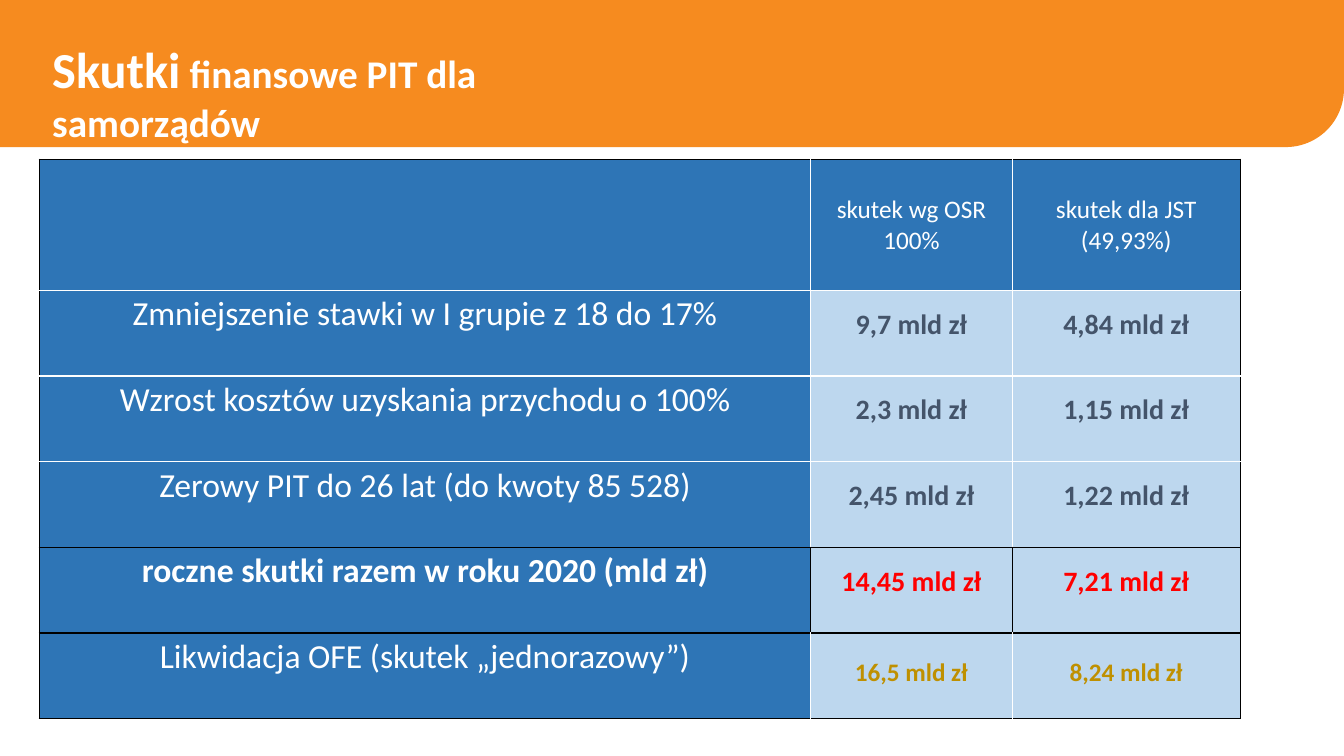
from lxml import etree
from pptx import Presentation
from pptx.dml.color import RGBColor
from pptx.enum.shapes import MSO_SHAPE
from pptx.enum.text import MSO_ANCHOR, PP_ALIGN
from pptx.oxml.ns import qn
from pptx.util import Inches, Pt

ROUNDED_CORNER = MSO_SHAPE.ROUND_1_RECTANGLE
MIDDLE, BOTTOM = MSO_ANCHOR.MIDDLE, MSO_ANCHOR.BOTTOM
CENTER = PP_ALIGN.CENTER

ORANGE = RGBColor(0xF6, 0x8B, 0x1F)
BLUE = RGBColor(0x2E, 0x75, 0xB6)
PALE_BLUE = RGBColor(0xBD, 0xD7, 0xEE)
SLATE = RGBColor(0x44, 0x54, 0x6A)
RED = RGBColor(0xFF, 0x00, 0x00)
GOLD = RGBColor(0xBF, 0x90, 0x00)
WHITE = RGBColor(0xFF, 0xFF, 0xFF)
BLACK = RGBColor(0x00, 0x00, 0x00)

FONT = "Calibri"
LINE_HEIGHT = 1.22
SLIDE_WIDTH, SLIDE_HEIGHT = 13.33, 7.5
COLUMN_WIDTHS = [7.65, 2, 2.26]
HEADER_HEIGHT, ROW_HEIGHT = 1.3, 0.85

HEADERS = ["", "skutek wg OSR 100%", "skutek dla JST (49,93%)"]
# Texts of the row, value size, value colour
EFFECTS = [
    (["Zmniejszenie stawki w I grupie z 18 do 17%", "9,7 mld zł", "4,84 mld zł"], 20, SLATE),
    (["Wzrost kosztów uzyskania przychodu o 100%", "2,3 mld zł", "1,15 mld zł"], 20, SLATE),
    (["Zerowy PIT do 26 lat (do kwoty 85 528)", "2,45 mld zł", "1,22 mld zł"], 20, SLATE),
    (["roczne skutki razem w roku 2020 (mld zł)", "14,45 mld zł", "7,21 mld zł"], 20, RED),
    (["Likwidacja OFE (skutek „jednorazowy”)", "16,5 mld zł", "8,24 mld zł"], 18, GOLD),
]
TOTAL_ROW = 4


def style_font(font, size, color, bold):
    font.name = FONT
    font.size = Pt(size)
    font.color.rgb = color
    font.bold = bold


def add_title_band(slide, left, top, width, height):
    band = slide.shapes.add_shape(
        ROUNDED_CORNER, Inches(left), Inches(top), Inches(width), Inches(height))
    band.adjustments[0] = 0.395
    band.shadow.inherit = False
    band.fill.solid()
    band.fill.fore_color.rgb = ORANGE
    band.line.fill.background()
    band._element.spPr.find(qn("a:xfrm")).set("flipV", "1")

    title = slide.shapes.add_textbox(
        Inches(left + 0.42), Inches(top + 0.33), Inches(6.26), Inches(height - 0.33))
    title.text_frame.word_wrap = True
    paragraph = title.text_frame.paragraphs[0]
    for text, size in [("Skutki", 36), (" finansowe PIT dla samorządów", 28)]:
        run = paragraph.add_run()
        run.text = text
        style_font(run.font, size, WHITE, True)


def set_borders(cell, colors):
    """Draw the left, right, top and bottom borders in the given colours."""
    properties = cell._tc.get_or_add_tcPr()
    for position, (side, color) in enumerate(zip("LRTB", colors)):
        line = etree.Element(qn(f"a:ln{side}"), w=str(Pt(1)))
        fill = etree.SubElement(line, qn("a:solidFill"))
        etree.SubElement(fill, qn("a:srgbClr"), val=str(color))
        properties.insert(position, line)


def border_colors(row, column):
    """Black around the table and throughout the total row, white elsewhere."""
    total = row == TOTAL_ROW
    black_sides = [
        total or column == 0,
        total or column == len(HEADERS) - 1,
        row in (0, TOTAL_ROW, TOTAL_ROW + 1),
        row in (TOTAL_ROW - 1, TOTAL_ROW, len(EFFECTS)),
    ]
    return [BLACK if black else WHITE for black in black_sides]


def fill_cell(cell, text, size, color, bold, background, anchor):
    cell.fill.solid()
    cell.fill.fore_color.rgb = background
    cell.vertical_anchor = anchor
    cell.margin_left = cell.margin_right = cell.margin_top = Inches(0.01)
    cell.margin_bottom = Pt(size * LINE_HEIGHT) if anchor == BOTTOM else 0
    cell.text = text
    paragraph = cell.text_frame.paragraphs[0]
    paragraph.alignment = CENTER
    style_font(paragraph.font, size, color, bold)


def add_effects_table(slide, left, top):
    height = HEADER_HEIGHT + ROW_HEIGHT * len(EFFECTS)
    table = slide.shapes.add_table(
        len(EFFECTS) + 1, len(HEADERS), Inches(left), Inches(top),
        Inches(sum(COLUMN_WIDTHS)), Inches(height)).table
    table.first_row = table.horz_banding = False
    for column, width in zip(table.columns, COLUMN_WIDTHS):
        column.width = Inches(width)
    for index, row in enumerate(table.rows):
        row.height = Inches(ROW_HEIGHT if index else HEADER_HEIGHT)

    for column, text in enumerate(HEADERS):
        fill_cell(table.cell(0, column), text, 18, WHITE, False, BLUE, MIDDLE)
    for row, (texts, value_size, value_color) in enumerate(EFFECTS, start=1):
        label, *values = texts
        fill_cell(table.cell(row, 0), label, 24, WHITE, row == TOTAL_ROW, BLUE, BOTTOM)
        for column, value in enumerate(values, start=1):
            fill_cell(table.cell(row, column), value, value_size, value_color,
                      True, PALE_BLUE, BOTTOM)
    for row in range(len(table.rows)):
        for column in range(len(table.columns)):
            set_borders(table.cell(row, column), border_colors(row, column))


def main():
    presentation = Presentation()
    presentation.slide_width = Inches(SLIDE_WIDTH)
    presentation.slide_height = Inches(SLIDE_HEIGHT)
    slide = presentation.slides.add_slide(presentation.slide_layouts[6])
    add_title_band(slide, 0, 0, SLIDE_WIDTH, 1.46)
    add_effects_table(slide, 0.39, 1.58)
    presentation.save("out.pptx")


if __name__ == "__main__":
    main()
